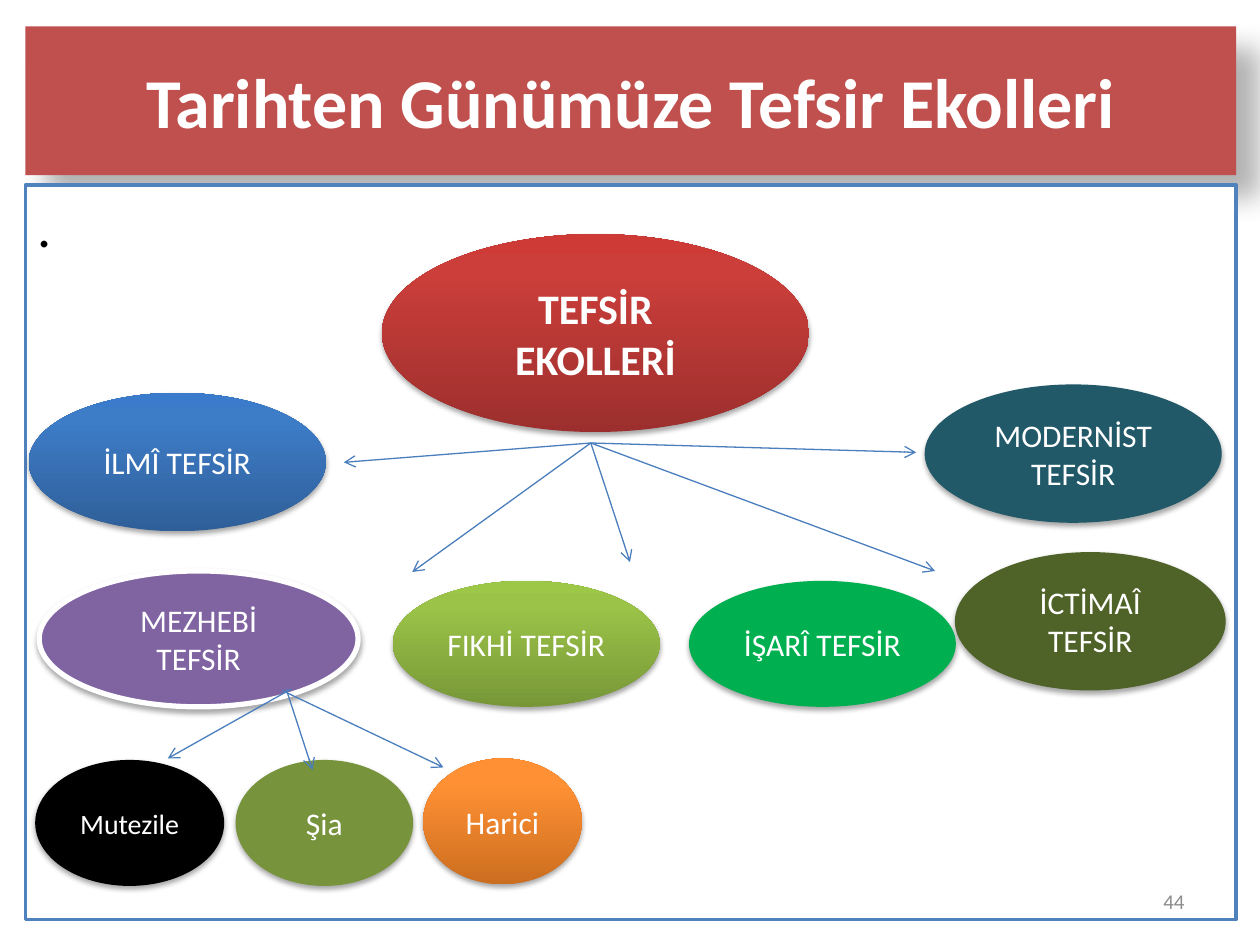
from pptx import Presentation
from pptx.dml.color import RGBColor
from pptx.enum.shapes import MSO_CONNECTOR, MSO_SHAPE
from pptx.enum.text import MSO_ANCHOR, PP_ALIGN
from pptx.oxml import parse_xml
from pptx.oxml.ns import nsdecls, qn
from pptx.util import Cm, Pt
from copy import deepcopy
from lxml import etree

OVAL, STRAIGHT = MSO_SHAPE.OVAL, MSO_CONNECTOR.STRAIGHT
MIDDLE, TOP = MSO_ANCHOR.MIDDLE, MSO_ANCHOR.TOP
LEFT, CENTER, RIGHT = PP_ALIGN.LEFT, PP_ALIGN.CENTER, PP_ALIGN.RIGHT

WHITE = RGBColor(0xFF, 0xFF, 0xFF)
BLACK = RGBColor(0x00, 0x00, 0x00)
GRAY = RGBColor(0x8C, 0x8C, 0x8C)
BRICK = RGBColor(0xC0, 0x50, 0x4D)
FRAME_BLUE = RGBColor(0x4F, 0x81, 0xBD)
ARROW_BLUE = RGBColor(0x4B, 0x7E, 0xBC)
PURPLE = RGBColor(0x80, 0x64, 0xA2)
DARK_OLIVE = RGBColor(0x4F, 0x62, 0x28)
OLIVE = RGBColor(0x77, 0x93, 0x3C)
TEAL = RGBColor(0x21, 0x59, 0x68)
GREEN = RGBColor(0x00, 0xB0, 0x50)
# Gradients run from the bottom to the top
RED_GRADIENT = (RGBColor(0x9C, 0x2F, 0x2D), RGBColor(0xCB, 0x3E, 0x3A), RGBColor(0xCE, 0x3B, 0x37))
LIME_GRADIENT = (RGBColor(0x77, 0x97, 0x37), RGBColor(0x9B, 0xC3, 0x48), RGBColor(0x9D, 0xC7, 0x46))
ORANGE_GRADIENT = (RGBColor(0xCC, 0x6E, 0x20), RGBColor(0xFF, 0x90, 0x34), RGBColor(0xFF, 0x91, 0x36))
BLUE_GRADIENT = (RGBColor(0x2F, 0x5F, 0x99), RGBColor(0x3D, 0x7C, 0xC7), RGBColor(0x3A, 0x7C, 0xCB))
GRADIENT_POSITIONS = (0, 0.8, 1)


class DiagramSlide:
    font = "Calibri"

    def __init__(self, slide):
        self.slide = slide

    def place(self, shape, box):
        shape.left, shape.top, shape.width, shape.height = map(Cm, box)

    def set_text(self, shape, text, size, color, bold=False, align=CENTER, anchor=MIDDLE):
        frame = shape.text_frame
        frame.text = text
        frame.word_wrap = True
        frame.vertical_anchor = anchor
        paragraph = frame.paragraphs[0]
        paragraph.alignment = align
        font = paragraph.runs[0].font
        font.name, font.size, font.bold = self.font, Pt(size), bold
        font.color.rgb = color
        return paragraph

    def paint(self, shape, fill):
        if isinstance(fill, RGBColor):
            shape.fill.solid()
            shape.fill.fore_color.rgb = fill
            return
        shape.fill.gradient()
        shape.fill.gradient_angle = 90
        stop_list = shape._element.spPr.find(".//" + qn("a:gsLst"))
        stop_list.append(deepcopy(stop_list[-1]))
        for stop, position, color in zip(shape.fill.gradient_stops, GRADIENT_POSITIONS, fill):
            stop.position = position
            stop.color.rgb = color

    def outline(self, shape, color, width):
        shape.line.color.rgb = color
        shape.line.width = Pt(width)

    def cast_shadow(self, shape, opacity, blur, distance, angle):
        shape.shadow.inherit = False
        effects = shape._element.spPr.find(qn("a:effectLst"))
        effects.append(parse_xml(
            f'<a:outerShdw {nsdecls("a")} blurRad="{Pt(blur)}" dist="{Pt(distance)}" '
            f'dir="{angle * 60000}" algn="t" rotWithShape="0"><a:srgbClr val="000000">'
            f'<a:alpha val="{opacity * 1000}"/></a:srgbClr></a:outerShdw>'))

    def title(self, text, box):
        shape = self.slide.shapes.title
        self.place(shape, box)
        self.paint(shape, BRICK)
        self.cast_shadow(shape, 30, 15, 18, 45)
        self.set_text(shape, text, 40, WHITE, bold=True)

    def body(self, text, box):
        shape = self.slide.placeholders[1]
        self.place(shape, box)
        self.paint(shape, WHITE)
        self.outline(shape, FRAME_BLUE, 2)
        paragraph = self.set_text(shape, text, 32, BLACK, align=LEFT, anchor=TOP)
        etree.SubElement(paragraph._p.get_or_add_pPr(), qn("a:buNone"))

    def ellipse(self, text, box, fill, size=18, bold=False, border=None):
        shape = self.slide.shapes.add_shape(OVAL, *map(Cm, box))
        self.paint(shape, fill)
        self.cast_shadow(shape, 35, 3.1, 1.8, 90)
        if border:
            self.outline(shape, border, 3)
        else:
            shape.line.fill.background()
        self.set_text(shape, text, size, WHITE, bold)

    def arrow(self, start, end):
        connector = self.slide.shapes.add_connector(STRAIGHT, *map(Cm, start + end))
        self.outline(connector, ARROW_BLUE, 0.75)
        properties = connector._element.spPr
        etree.SubElement(properties.find(qn("a:ln")), qn("a:tailEnd"), type="arrow")
        etree.SubElement(properties, qn("a:effectLst"))

    def page_number(self, text, box):
        shape = self.slide.shapes.add_textbox(*map(Cm, box))
        self.set_text(shape, text, 12, GRAY, align=RIGHT)


def main():
    presentation = Presentation()
    presentation.slide_width, presentation.slide_height = Cm(25.4), Cm(19.05)
    layout = presentation.slide_layouts[1]
    diagram = DiagramSlide(presentation.slides.add_slide(layout))

    # Heading and framed area
    diagram.title("Tarihten Günümüze Tefsir Ekolleri", (0.51, 0.53, 24.41, 3))
    diagram.body(".", (0.51, 3.73, 24.41, 14.81))

    # Root and schools
    diagram.ellipse("TEFSİR EKOLLERİ", (7.7, 4.72, 8.61, 3.99), RED_GRADIENT, 24, bold=True)
    diagram.ellipse("MEZHEBİ TEFSİR", (0.79, 11.51, 6.43, 2.74), PURPLE, border=WHITE)
    diagram.ellipse("FIKHİ TEFSİR", (7.92, 11.71, 5.38, 2.54), LIME_GRADIENT)
    diagram.ellipse("İCTİMAÎ TEFSİR", (19.25, 11.13, 5.46, 2.79), DARK_OLIVE)
    diagram.ellipse("MODERNİST TEFSİR", (18.64, 7.75, 5.99, 2.79), TEAL)
    diagram.ellipse("İLMÎ TEFSİR", (0.58, 7.92, 5.99, 2.79), BLUE_GRADIENT)
    diagram.ellipse("İŞARÎ TEFSİR", (13.89, 11.71, 5.38, 2.54), GREEN)

    # Sects
    diagram.ellipse("Mutezile", (0.71, 15.32, 3.81, 2.54), BLACK, 16)
    diagram.ellipse("Şia", (4.75, 15.32, 3.58, 2.54), OLIVE)
    diagram.ellipse("Harici", (8.53, 15.29, 3.2, 2.54), ORANGE_GRADIENT)

    # Arrows from the root to the schools
    root = (11.91, 8.93)
    for end in ((8.31, 11.53), (12.7, 11.33), (18.85, 11.51), (18.47, 9.12), (6.93, 9.32)):
        diagram.arrow(root, end)

    # Arrows to the sects
    diagram.arrow((5.69, 13.92), (8.94, 15.47))
    diagram.arrow((5.87, 13.89), (3.38, 15.29))
    diagram.arrow((5.77, 13.89), (6.3, 15.52))

    diagram.page_number("44", (18.21, 17.65, 5.92, 1.02))
    presentation.save("out.pptx")


if __name__ == "__main__":
    main()
